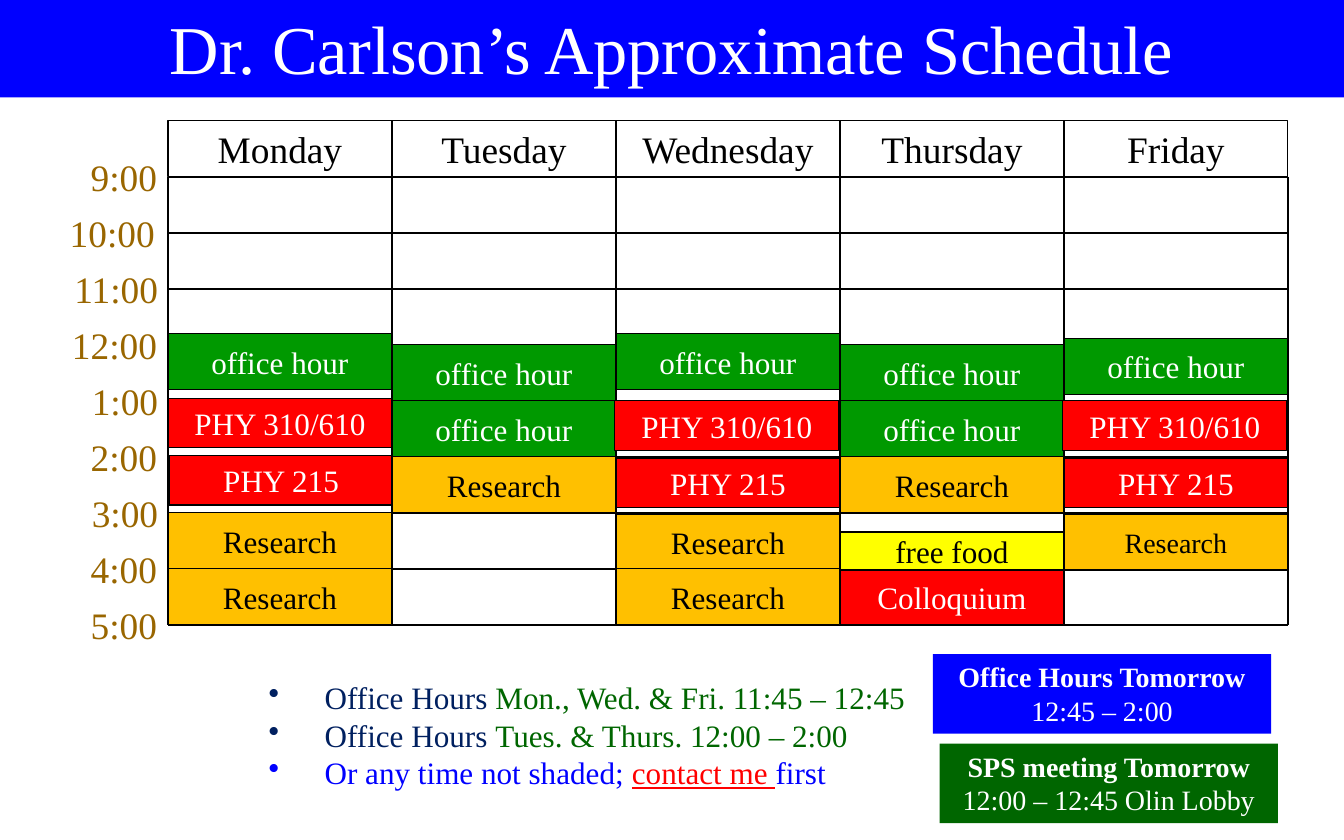
from dataclasses import dataclass

from lxml import etree
from pptx import Presentation
from pptx.dml.color import RGBColor
from pptx.enum.shapes import MSO_CONNECTOR, MSO_SHAPE
from pptx.enum.text import MSO_ANCHOR, PP_ALIGN
from pptx.oxml.ns import qn
from pptx.util import Inches, Pt

RECTANGLE = MSO_SHAPE.RECTANGLE
STRAIGHT = MSO_CONNECTOR.STRAIGHT
TOP, MIDDLE = MSO_ANCHOR.TOP, MSO_ANCHOR.MIDDLE
LEFT, CENTER, RIGHT = PP_ALIGN.LEFT, PP_ALIGN.CENTER, PP_ALIGN.RIGHT


@dataclass(frozen=True)
class Theme:
    font: str = "Times New Roman"
    black: str = "000000"
    white: str = "FFFFFF"
    blue: str = "0000FF"
    navy: str = "002060"
    brown: str = "996600"
    red: str = "FF0000"
    orange: str = "FFC000"
    yellow: str = "FFFF00"
    green: str = "009900"
    dark_green: str = "006600"
    title_size: int = 44
    grid_size: int = 24
    body_size: int = 20
    small_size: int = 18
    line_width: float = 0.75


THEME = Theme()


@dataclass(frozen=True)
class TextRun:
    text: str
    color: str
    size: int = THEME.body_size
    bold: bool = False
    underline: bool = False


@dataclass(frozen=True)
class Activity:
    label: str
    fill: str
    color: str
    height: float = 0.5
    inset_x: float = 0.1
    inset_y: float = 0.05


@dataclass(frozen=True)
class Block:
    activity: Activity
    day: int
    top: float
    shift: float = 0
    size: int = THEME.body_size


GRID_LEFT, GRID_TOP = 1.5, 1.58
DAY_WIDTH, HOUR_HEIGHT = 2, 0.5
DAYS = ["Monday", "Tuesday", "Wednesday", "Thursday", "Friday"]
HOURS = [("9:00", 0.42), ("10:00", 0.4), ("11:00", 0.43), ("12:00", 0.42), ("1:00", 0.43),
         ("2:00", 0.42), ("3:00", 0.43), ("4:00", 0.42), ("5:00", 0.42)]
MONDAY, TUESDAY, WEDNESDAY, THURSDAY, FRIDAY = range(len(DAYS))

OFFICE_HOUR = Activity("office hour", THEME.green, THEME.white)
RESEARCH = Activity("Research", THEME.orange, THEME.black)
COLLOQUIUM = Activity("Colloquium", THEME.red, THEME.white)
FREE_FOOD = Activity("free food", THEME.yellow, THEME.black, height=0.34, inset_y=0)
PHY_310 = Activity("PHY 310/610", THEME.red, THEME.white, height=0.44, inset_x=0)
PHY_215 = Activity("PHY 215", THEME.red, THEME.white, height=0.44)

BLOCKS = [
    Block(RESEARCH, THURSDAY, 4.08),
    Block(COLLOQUIUM, THURSDAY, 5.08),
    Block(PHY_215, MONDAY, 4.07, shift=0.01),
    Block(PHY_310, MONDAY, 3.56),
    Block(RESEARCH, TUESDAY, 4.08),
    Block(RESEARCH, MONDAY, 4.58),
    Block(RESEARCH, WEDNESDAY, 4.59),
    Block(RESEARCH, FRIDAY, 4.59, size=THEME.small_size),
    Block(OFFICE_HOUR, MONDAY, 2.98),
    Block(FREE_FOOD, THURSDAY, 4.75),
    Block(OFFICE_HOUR, TUESDAY, 3.08),
    Block(OFFICE_HOUR, TUESDAY, 3.58),
    Block(OFFICE_HOUR, WEDNESDAY, 2.98),
    Block(OFFICE_HOUR, THURSDAY, 3.08),
    Block(OFFICE_HOUR, THURSDAY, 3.58),
    Block(OFFICE_HOUR, FRIDAY, 3.02),
    Block(RESEARCH, WEDNESDAY, 5.08),
    Block(RESEARCH, MONDAY, 5.08),
    Block(PHY_215, WEDNESDAY, 4.09),
    Block(PHY_310, WEDNESDAY, 3.58, shift=-0.01),
    Block(PHY_215, FRIDAY, 4.09),
    Block(PHY_310, FRIDAY, 3.58, shift=-0.01),
]

NOTES = [
    [TextRun("Office Hours ", THEME.navy),
     TextRun("Mon., Wed. & Fri. 11:45 – 12:45", THEME.dark_green)],
    [TextRun("Office Hours ", THEME.navy),
     TextRun("Tues. & Thurs. 12:00 – 2:00", THEME.dark_green)],
    [TextRun("Or any time not shaded; ", THEME.blue),
     TextRun("contact me ", THEME.red, underline=True),
     TextRun("first", THEME.blue)],
]
NOTICES = [
    (8.33, 5.84, THEME.blue, "Office Hours Tomorrow", "12:45 – 2:00"),
    (8.39, 6.64, THEME.dark_green, "SPS meeting Tomorrow", "12:00 – 12:45 Olin Lobby"),
]


def day_left(day: int) -> float:
    return GRID_LEFT + day * DAY_WIDTH


def hour_top(hour: int) -> float:
    return GRID_TOP + hour * HOUR_HEIGHT


def write(shape, lines: list[list[TextRun]], align, anchor=TOP) -> None:
    """Fill a shape with one paragraph for each list of runs."""
    frame = shape.text_frame
    frame.word_wrap = True
    frame.vertical_anchor = anchor
    for index, line in enumerate(lines):
        paragraph = frame.add_paragraph() if index else frame.paragraphs[0]
        paragraph.alignment = align
        for item in line:
            run = paragraph.add_run()
            run.text = item.text
            font = run.font
            font.name, font.size = THEME.font, Pt(item.size)
            font.bold, font.underline = item.bold, item.underline
            font.color.rgb = RGBColor.from_string(item.color)


def add_text(slide, left: float, top: float, width: float, height: float, lines, align):
    box = slide.shapes.add_textbox(Inches(left), Inches(top), Inches(width), Inches(height))
    write(box, lines, align)
    return box


def add_box(slide, left: float, top: float, width: float, height: float, lines,
            fill: str | None = None, outlined: bool = True, anchor=TOP):
    box = slide.shapes.add_shape(
        RECTANGLE, Inches(left), Inches(top), Inches(width), Inches(height))
    box.shadow.inherit = False
    if fill:
        box.fill.solid()
        box.fill.fore_color.rgb = RGBColor.from_string(fill)
    else:
        box.fill.background()
    if outlined:
        box.line.color.rgb = RGBColor.from_string(THEME.black)
        box.line.width = Pt(THEME.line_width)
    else:
        box.line.fill.background()
    write(box, lines, CENTER, anchor)
    return box


def add_line(slide, left: float, top: float, right: float, bottom: float) -> None:
    line = slide.shapes.add_connector(
        STRAIGHT, Inches(left), Inches(top), Inches(right), Inches(bottom))
    line.line.color.rgb = RGBColor.from_string(THEME.black)
    line.line.width = Pt(THEME.line_width)
    etree.SubElement(line._element.spPr, qn("a:effectLst"))


def add_grid(slide) -> None:
    for hour, (label, left) in enumerate(HOURS):
        top = hour_top(hour)
        run = TextRun(label, THEME.brown, THEME.grid_size)
        add_text(slide, left, top - 0.25, 1.08, 0.51, [[run]], RIGHT)
        add_line(slide, GRID_LEFT, top, day_left(len(DAYS)), top)
    for day, name in enumerate(DAYS):
        run = TextRun(name, THEME.black, THEME.grid_size)
        add_box(slide, day_left(day), GRID_TOP - HOUR_HEIGHT, DAY_WIDTH, HOUR_HEIGHT, [[run]])
    for day in range(len(DAYS) + 1):
        add_line(slide, day_left(day), GRID_TOP, day_left(day), hour_top(len(HOURS) - 1))


def add_block(slide, block: Block) -> None:
    activity = block.activity
    run = TextRun(activity.label, activity.color, block.size)
    box = add_box(slide, day_left(block.day) + block.shift, block.top, DAY_WIDTH,
                  activity.height, [[run]], activity.fill, anchor=MIDDLE)
    frame = box.text_frame
    frame.margin_left = frame.margin_right = Inches(activity.inset_x)
    frame.margin_top = frame.margin_bottom = Inches(activity.inset_y)


def add_notes(slide) -> None:
    box = add_text(slide, 2.3, 6.01, 6.24, 1.11, NOTES, LEFT)
    for paragraph in box.text_frame.paragraphs:
        properties = paragraph._p.get_or_add_pPr()
        properties.set("marL", str(Inches(0.5)))
        properties.set("indent", str(Inches(-0.5)))
        etree.SubElement(properties, qn("a:buChar"), char="•")


def main() -> None:
    presentation = Presentation()
    presentation.slide_width, presentation.slide_height = Inches(12), Inches(7.5)
    slide = presentation.slides.add_slide(presentation.slide_layouts[6])
    add_grid(slide)
    title = TextRun("Dr. Carlson’s Approximate Schedule", THEME.white, THEME.title_size)
    add_box(slide, 0, -0.03, 12, 0.9, [[title]], THEME.blue, outlined=False, anchor=MIDDLE)
    for block in BLOCKS:
        add_block(slide, block)
    add_notes(slide)
    for left, top, fill, heading, detail in NOTICES:
        lines = [[TextRun(heading, THEME.white, THEME.small_size, bold=True)],
                 [TextRun(detail, THEME.white, THEME.small_size)]]
        add_box(slide, left, top, 3.02, 0.71, lines, fill, outlined=False)
    presentation.save("out.pptx")


if __name__ == "__main__":
    main()
